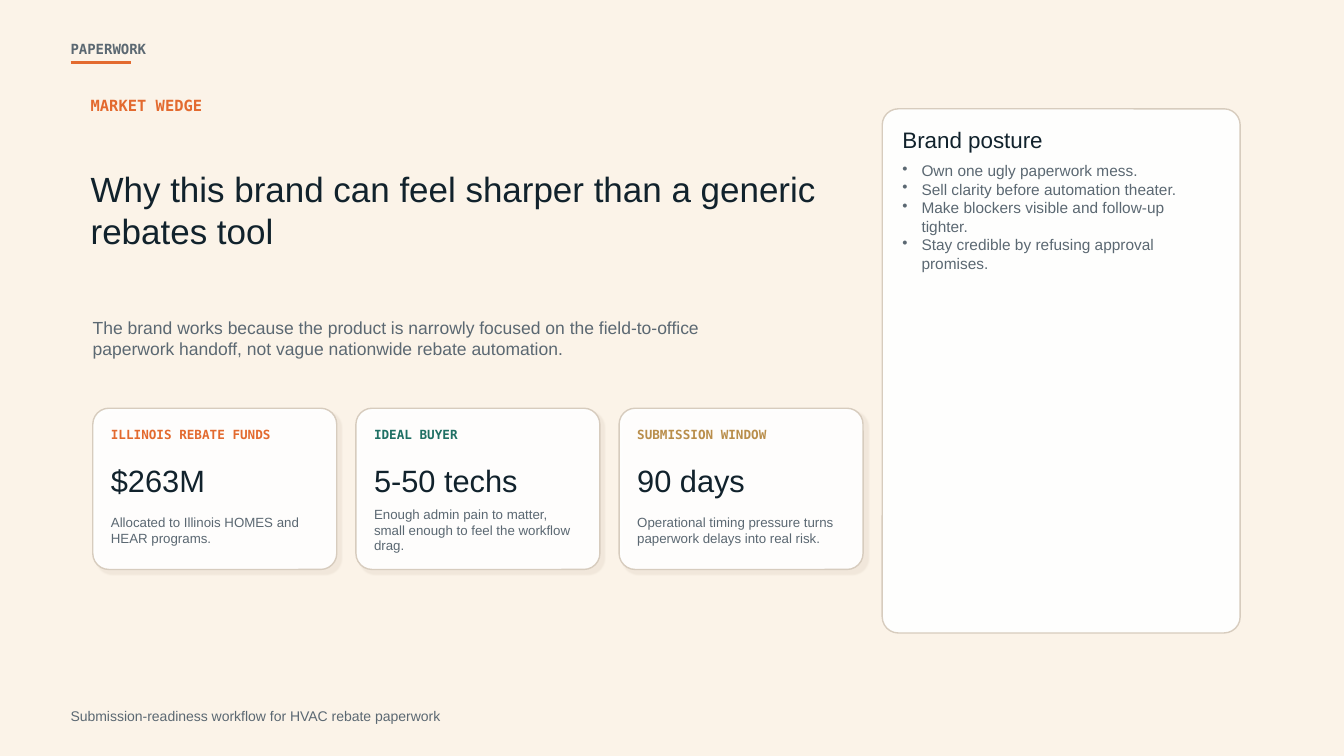
from lxml.etree import SubElement
from pptx import Presentation
from pptx.dml.color import RGBColor
from pptx.enum.shapes import MSO_CONNECTOR, MSO_SHAPE
from pptx.enum.text import MSO_ANCHOR
from pptx.oxml.ns import qn
from pptx.util import Pt

SCALE = 9144
PAPER = RGBColor(0xFB, 0xF3, 0xE8)
WHITE = RGBColor(0xFF, 0xFF, 0xFF)
INK = RGBColor(0x11, 0x22, 0x2C)
SLATE = RGBColor(0x5B, 0x68, 0x72)
ORANGE = RGBColor(0xE3, 0x6A, 0x2F)
GREEN = RGBColor(0x1F, 0x70, 0x64)
GOLD = RGBColor(0xB9, 0x8E, 0x4B)
EDGE = RGBColor(0xD7, 0xCC, 0xBE)
SHADE = RGBColor(0xB7, 0xA4, 0x8F)
SANS = "Arial"
MONO = "DejaVu Sans Mono"


def add(parent, tag, **attrs):
    return SubElement(parent, qn(tag), {k: str(v) for k, v in attrs.items()})


def px(*sizes):
    return [size * SCALE for size in sizes]


class Deck:
    def __init__(self, width, height):
        self.file = Presentation()
        self.file.slide_width, self.file.slide_height = px(width, height)
        self.slide = self.file.slides.add_slide(self.file.slide_layouts[6])
        self.shapes = self.slide.shapes

    def block(self, box, fill, kind=MSO_SHAPE.RECTANGLE):
        shape = self.shapes.add_shape(kind, *px(*box))
        shape.shadow.inherit = False
        shape.fill.solid()
        shape.fill.fore_color.rgb = fill
        shape.line.fill.background()
        return shape

    def card(self, box, curve, shadow=False):
        shape = self.block(box, WHITE, MSO_SHAPE.ROUNDED_RECTANGLE)
        shape.adjustments[0] = curve
        shape.line.color.rgb = EDGE
        shape.line.width = Pt(1)
        props = shape._element.spPr
        tint = props.find(qn("a:solidFill")).find(qn("a:srgbClr"))
        add(tint, "a:alpha", val=94000)
        if shadow:
            cast = add(props.find(qn("a:effectLst")), "a:outerShdw", blurRad=Pt(1),
                       dist=Pt(4), dir=45 * 60000, algn="ctr", rotWithShape=0)
            add(add(cast, "a:srgbClr", val=SHADE), "a:alpha", val=14000)

    def rule(self, start, end, color, width):
        line = self.shapes.add_connector(MSO_CONNECTOR.STRAIGHT, *px(*start, *end))
        line.line.color.rgb = color
        line.line.width = Pt(width)
        add(line._element.spPr, "a:effectLst")

    def frame(self, box, anchor):
        frame = self.shapes.add_textbox(*px(*box)).text_frame
        frame.word_wrap = True
        frame.vertical_anchor = anchor
        frame.margin_left = frame.margin_right = 0
        frame.margin_top = frame.margin_bottom = 0
        return frame

    def run(self, para, text, size, color, font=SANS):
        run = para.add_run()
        run.text = text
        run.font.name = font
        run.font.size = Pt(size)
        run.font.bold = font == MONO
        run.font.color.rgb = color

    def text(self, box, text, size, color, font=SANS):
        frame = self.frame(box, MSO_ANCHOR.MIDDLE)
        self.run(frame.paragraphs[0], text, size, color, font)

    def list(self, box, items, size, color, indent):
        frame = self.frame(box, MSO_ANCHOR.TOP)
        for i, item in enumerate(items):
            para = frame.add_paragraph() if i else frame.paragraphs[0]
            props = para._p.get_or_add_pPr()
            props.set("marL", str(indent * SCALE))
            props.set("indent", str(-indent * SCALE))
            add(props, "a:buChar", char="•")
            self.run(para, item, size, color)

    def metric(self, left, top, label, color, value, note):
        self.card((left, top, 242, 160), 0.1, shadow=True)
        inner = left + 18
        self.text((inner, top + 16, 180, 20), label, 9, color, MONO)
        self.text((inner, top + 48, 195, 46), value, 22, INK)
        self.text((inner, top + 98, 205, 45), note, 9.5, SLATE)


METRICS = [
    ("ILLINOIS REBATE FUNDS", ORANGE, "$263M",
     "Allocated to Illinois HOMES and HEAR programs."),
    ("IDEAL BUYER", GREEN, "5-50 techs",
     "Enough admin pain to matter, small enough to feel the workflow drag."),
    ("SUBMISSION WINDOW", GOLD, "90 days",
     "Operational timing pressure turns paperwork delays into real risk."),
]
POSTURE = [
    "Own one ugly paperwork mess.",
    "Sell clarity before automation theater.",
    "Make blockers visible and follow-up tighter.",
    "Stay credible by refusing approval promises.",
]


def main():
    deck = Deck(1333, 750)
    deck.block((0, 0, 1333, 750), PAPER)
    deck.rule((70, 62), (130, 62), ORANGE, 2.5)
    deck.text((70, 36, 220, 25), "PAPERWORK", 10, SLATE, MONO)
    deck.text((70, 700, 480, 20),
              "Submission-readiness workflow for HVAC rebate paperwork", 10, SLATE)
    deck.text((90, 95, 400, 20), "MARKET WEDGE", 11, ORANGE, MONO)
    deck.text((90, 128, 740, 160),
              "Why this brand can feel sharper than a generic rebates tool", 25, INK)
    deck.text((92, 295, 680, 80),
              "The brand works because the product is narrowly focused on the "
              "field-to-office paperwork handoff, not vague nationwide rebate "
              "automation.", 12.5, SLATE)
    for i, metric in enumerate(METRICS):
        deck.metric(92 + i * 261, 405, *metric)
    deck.card((875, 108, 355, 520), 0.045)
    deck.text((895, 124, 315, 28), "Brand posture", 16, INK)
    deck.list((895, 160, 310, 450), POSTURE, 11, SLATE, 19)
    deck.file.save("out.pptx")


if __name__ == "__main__":
    main()
